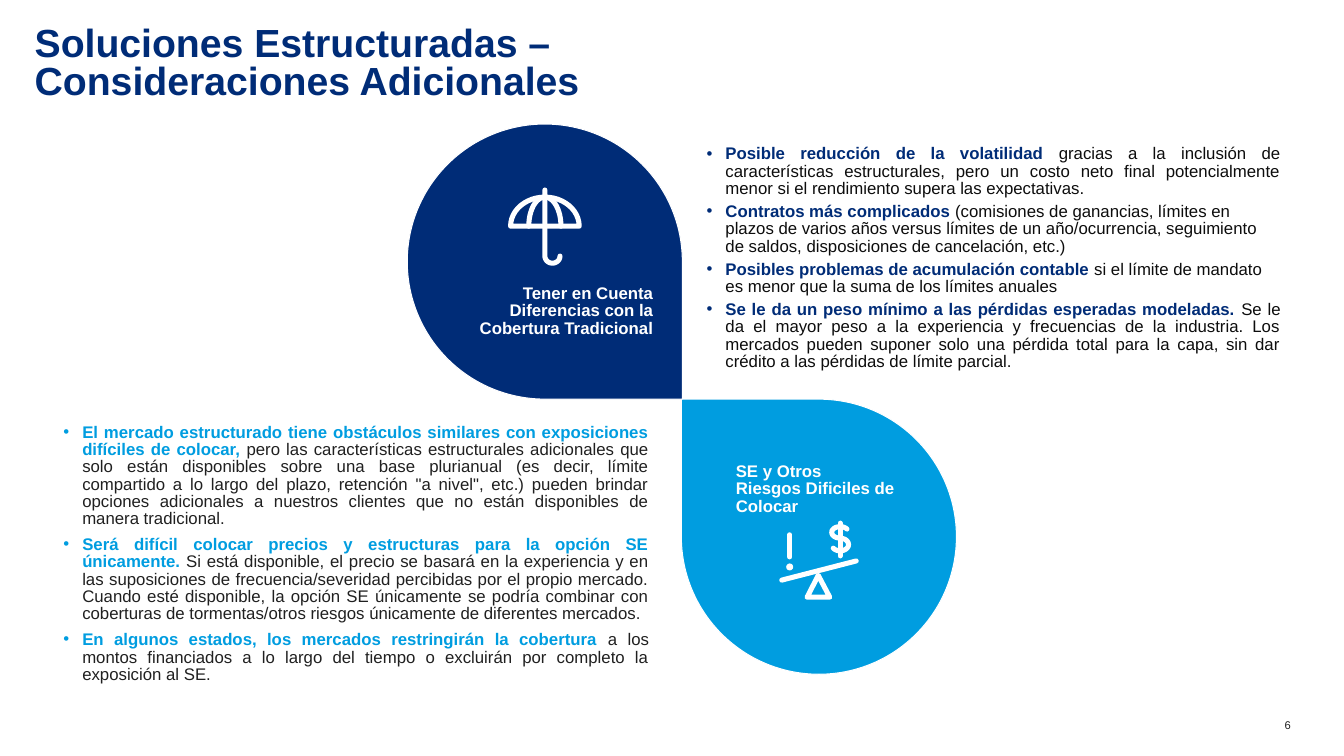
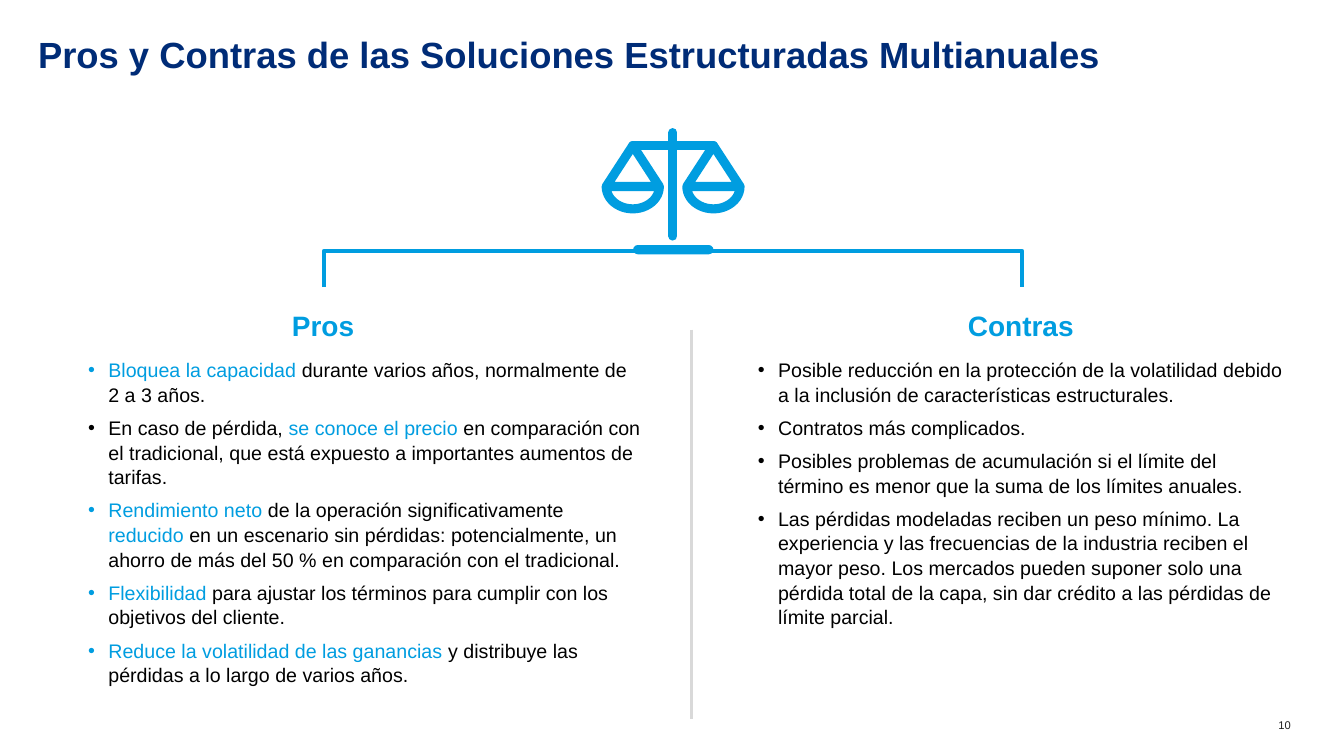
import math
import pptx
import pptx.util
import pptx.dml.color
import pptx.enum.shapes
import pptx.enum.text
import pptx.oxml.ns
import lxml.etree

Pt = pptx.util.Pt
qn = pptx.oxml.ns.qn
ALIGN = pptx.enum.text.PP_ALIGN
SHAPE = pptx.enum.shapes.MSO_SHAPE

COLORS = {
    "navy": "002C77", "sky": "009DE0", "white": "FFFFFF", "black": "000000",
    "ink": "202020", "body": "0D0D0D", "rule": "D9D9D9",
}
RGB = {name: pptx.dml.color.RGBColor.from_string(code) for name, code in COLORS.items()}

TITLE = {"bold": True, "line_spacing": 0.8}
PAGE_NUMBER = {"size": 8, "alignment": ALIGN.RIGHT}
DROP_LABEL = {"size": 12, "bold": True, "line_spacing": 0.86}
DROP_LIST = {"size": 12, "line_spacing": 0.86, "indent": 13.5, "inset": (7.2, 3.6)}
COLUMN_HEAD = {"size": 20, "bold": True, "line_spacing": 1.05, "alignment": ALIGN.CENTER}
COLUMN_LIST = {"size": 14, "line_spacing": 1.05, "space_after": Pt(6), "indent": 14.4}


def add_text(slide, box, paragraphs, style):
    """Each paragraph is (own format values, [(text, colour, own font values), ...])."""
    frame = slide.shapes.add_textbox(*map(Pt, box)).text_frame
    frame.word_wrap = True
    side, top = style.get("inset", (0, 0))
    frame.margin_left = frame.margin_right = Pt(side)
    frame.margin_top = frame.margin_bottom = Pt(top)
    for index, (own_format, runs) in enumerate(paragraphs):
        paragraph = frame.add_paragraph() if index else frame.paragraphs[0]
        if "indent" in style:
            properties = paragraph._p.get_or_add_pPr()
            properties.set("marL", str(Pt(style["indent"])))
            properties.set("indent", str(-Pt(style["indent"])))
            lxml.etree.SubElement(properties, qn("a:buFont")).set("typeface", "Arial")
            lxml.etree.SubElement(properties, qn("a:buChar")).set("char", "•")
        layout = {**style, **own_format}
        for name in ("alignment", "line_spacing", "space_after"):
            if name in layout:
                setattr(paragraph, name, layout[name])
        for text, color, own_font in runs:
            for line_index, line in enumerate(text.split("\n")):
                if line_index:
                    paragraph.add_line_break()
                run = paragraph.add_run()
                run.text = line
                font = {"name": "Arial", "size": Pt(style["size"]),
                        "bold": style.get("bold", False), **own_font}
                for name, value in font.items():
                    setattr(run.font, name, value)
                run.font.color.rgb = RGB[color]


def add_strokes(slide, outlines, color, width, cap="rnd"):
    """Outline steps are points (x, y) or arcs (cx, cy, rx, ry, start, end) in degrees."""
    contours = []
    for outline in outlines:
        points = []
        for step in outline:
            if len(step) == 2:
                points.append(step)
                continue
            cx, cy, rx, ry, start, end = step
            for part in range(25):
                angle = math.radians(start + (end - start) * part / 24)
                points.append((cx + rx * math.cos(angle), cy + ry * math.sin(angle)))
        contours.append([(Pt(x), Pt(y)) for x, y in points])
    first = contours[0]
    if len(contours) == 1 and len(first) == 2:
        stroke = slide.shapes.add_connector(
            pptx.enum.shapes.MSO_CONNECTOR.STRAIGHT, *first[0], *first[1])
    else:
        builder = slide.shapes.build_freeform(*first[0])
        for index, contour in enumerate(contours):
            if index:
                builder.move_to(*contour[0])
            builder.add_line_segments(contour[1:], close=False)
        stroke = builder.convert_to_shape()
        stroke.fill.background()
    stroke.line.color.rgb = RGB[color]
    stroke.line.width = Pt(width)
    properties = stroke._element.spPr
    line = properties.find(qn("a:ln"))
    line.set("cap", cap)
    lxml.etree.SubElement(line, qn("a:round"))
    lxml.etree.SubElement(properties, qn("a:effectLst"))


deck = pptx.Presentation()
deck.slide_width, deck.slide_height = Pt(960), Pt(540)

slides = []
for title, title_left, title_top, title_size, number in (
    ("Soluciones Estructuradas – \nConsideraciones Adicionales", 24.8, 19.7, 28, "6"),
    ("Pros y Contras de las Soluciones Estructuradas Multianuales", 27.2, 28.8, 26, "10"),
):
    slide = deck.slides.add_slide(deck.slide_layouts[6])
    add_text(slide, (title_left, title_top, 883.4, 38.9),
             [({}, [(title, "navy", {})])], {**TITLE, "size": title_size})
    add_text(slide, (899.8, 513.4, 22.3, 9.4), [({}, [(number, "ink", {})])], PAGE_NUMBER)
    slides.append(slide)
considerations, pros_cons = slides

# Considerations: two drops that meet at their tips
DROP_SIZE = 196.5
for left, top, turn, color, label, label_box, alignment in (
    (486.7, 285.1, 270, "sky", "SE y Otros\nRiesgos Dificiles de Colocar",
     (525.6, 331.2, 120.2, 37.4), ALIGN.LEFT),
    (290.9, 88.6, 90, "navy", "Tener en Cuenta\nDiferencias con la Cobertura Tradicional",
     (324, 204.1, 142.6, 37.4), ALIGN.RIGHT),
):
    drop = considerations.shapes.add_shape(
        SHAPE.TEAR, Pt(left), Pt(top), Pt(DROP_SIZE), Pt(DROP_SIZE))
    drop.rotation = turn
    drop.shadow.inherit = False
    drop.fill.solid()
    drop.fill.fore_color.rgb = RGB[color]
    drop.line.color.rgb = RGB["white"]
    drop.line.width = Pt(0.75)
    add_text(considerations, label_box,
             [({"alignment": alignment}, [(label, "white", {})])], DROP_LABEL)

traditional_points = (
    (ALIGN.JUSTIFY, "Posible reducción de la volatilidad ",
     "gracias a la inclusión de características estructurales, pero un costo neto final "
     "potencialmente menor si el rendimiento supera las expectativas."),
    (ALIGN.LEFT, "Contratos más complicados ",
     "(comisiones de ganancias, límites en plazos de varios años versus límites de un "
     "año/ocurrencia, seguimiento de saldos, disposiciones de cancelación, etc.)"),
    (ALIGN.LEFT, "Posibles problemas de acumulación contable ",
     "si el límite de mandato es menor que la suma de los límites anuales"),
    (ALIGN.JUSTIFY, "Se le da un peso mínimo a las pérdidas esperadas modeladas. ",
     "Se le da el mayor peso a la experiencia y frecuencias de la industria. Los mercados "
     "pueden suponer solo una pérdida total para la capa, sin dar crédito a las pérdidas "
     "de límite parcial."),
)
hard_risk_points = (
    (ALIGN.JUSTIFY, "El mercado estructurado tiene obstáculos similares con exposiciones "
     "difíciles de colocar, ",
     "pero las características estructurales adicionales que solo están disponibles sobre "
     "una base plurianual (es decir, límite compartido a lo largo del plazo, retención "
     "\"a nivel\", etc.) pueden brindar opciones adicionales a nuestros clientes que no "
     "están disponibles de manera tradicional."),
    (ALIGN.JUSTIFY, "Será difícil colocar precios y estructuras para la opción SE únicamente. ",
     "Si está disponible, el precio se basará en la experiencia y en las suposiciones de "
     "frecuencia/severidad percibidas por el propio mercado. Cuando esté disponible, la "
     "opción SE únicamente se podría combinar con coberturas de tormentas/otros riesgos "
     "únicamente de diferentes mercados."),
    (ALIGN.JUSTIFY, "En algunos estados, los mercados restringirán la cobertura ",
     "a los montos financiados a lo largo del tiempo o excluirán por completo la "
     "exposición al SE."),
)
for box, points, lead_color, rest_color, gap in (
    ((497.6, 100.8, 424.2, 169.2), traditional_points, "navy", "body", 4),
    ((38.2, 299.5, 432.5, 194.4), hard_risk_points, "sky", "ink", 6),
):
    add_text(considerations, box,
             [({"alignment": alignment},
               [(lead, lead_color, {"bold": True}), (rest, rest_color, {})])
              for alignment, lead, rest in points],
             {**DROP_LIST, "space_after": Pt(gap)})

umbrella = [
    [(389.2, 161.6, 24.5, 20.8, 180, 360), (364.7, 161.6)],
    [(389.2, 161.6, 11.5, 20.8, 180, 360)],
    [(389.2, 135.7), (394.6, 182.9, 5.4, 5.1, 180, 0)],
]
seesaw = [
    [(558.4, 414.4), (611.6, 400.7)],
    [(584.5, 411), (576.5, 426.6), (592.7, 426.6), (584.5, 411)],
]
dollar = [
    [(600.1, 373.7), (600.1, 397.1)],
    [(600.1, 380.3, 6, 4.1, -35, -270), (600.1, 389, 6, 4.5, -90, 145)],
]
exclamation_bar = [[(564.1, 382), (564.1, 397.8)]]
for icon in (umbrella, seesaw, dollar, exclamation_bar):
    add_strokes(considerations, icon, "white", 3.6)

# Pros and cons: bracket, divider and scale
add_strokes(pros_cons, [[(231.3, 205.2), (231.3, 179.3), (730, 179.3), (730, 205.2)]],
            "sky", 3, cap="flat")
add_strokes(pros_cons, [[(493.9, 235.4), (493.9, 513.4)]], "rule", 2, cap="flat")

PAN_CENTERS = (452, 509.6)
PAN_TOP, PAN_RADIUS, BEAM_TOP = 133.2, 19, 104
scale = [
    [(480.7, 94.7), (480.7, 168.6)],
    [(PAN_CENTERS[0], BEAM_TOP), (PAN_CENTERS[1], BEAM_TOP)],
]
for center in PAN_CENTERS:
    scale.append([(center, PAN_TOP, PAN_RADIUS, 16, 0, 180),
                  (center, BEAM_TOP), (center + PAN_RADIUS, PAN_TOP),
                  (center - PAN_RADIUS, PAN_TOP)])
add_strokes(pros_cons, scale, "sky", 6.5)

# Solid details of the icons: exclamation dot and scale foot
for slide, kind, box, color in (
    (considerations, SHAPE.OVAL, (561.6, 402.5, 5, 5), "white"),
    (pros_cons, SHAPE.ROUNDED_RECTANGLE, (452.2, 175, 57.4, 6.6), "sky"),
):
    detail = slide.shapes.add_shape(kind, *map(Pt, box))
    if kind == SHAPE.ROUNDED_RECTANGLE:
        detail.adjustments[0] = 0.5
    detail.shadow.inherit = False
    detail.fill.solid()
    detail.fill.fore_color.rgb = RGB[color]
    detail.line.fill.background()

pros = (
    (("Bloquea la capacidad ", "sky"),
     ("durante varios años, normalmente de 2 a 3 años.", "black")),
    (("En caso de pérdida, ", "black"), ("se conoce el precio ", "sky"),
     ("en comparación con el tradicional, que está expuesto a importantes aumentos de "
      "tarifas.", "black")),
    (("Rendimiento neto ", "sky"), ("de la operación significativamente ", "black"),
     ("reducido ", "sky"),
     ("en un escenario sin pérdidas: potencialmente, un ahorro de más del 50 % en "
      "comparación con el tradicional.", "black")),
    (("Flexibilidad", "sky"),
     (" para ajustar los términos para cumplir con los objetivos del cliente.", "black")),
    (("Reduce la volatilidad de las ganancias ", "sky"),
     ("y distribuye las pérdidas a lo largo de varios años.", "black")),
)
contras = (
    (("Posible reducción en la protección de la volatilidad debido a la inclusión de "
      "características estructurales.", "black"),),
    (("Contratos más complicados.", "black"),),
    (("Posibles problemas de acumulación si el límite del término es menor que la suma de "
      "los límites anuales.", "black"),),
    (("Las pérdidas modeladas reciben un peso mínimo. La experiencia y las frecuencias de "
      "la industria reciben el mayor peso. Los mercados pueden suponer solo una pérdida "
      "total de la capa, sin dar crédito a las pérdidas de límite parcial.", "black"),),
)
for heading, heading_left, points, list_left, list_width in (
    ("Pros", 187.2, pros, 63, 395.3),
    ("Contras", 685.6, contras, 541.4, 375.8),
):
    add_text(pros_cons, (heading_left, 218.9, 87.1, 23.8),
             [({}, [(heading, "sky", {})])], COLUMN_HEAD)
    add_text(pros_cons, (list_left, 254.9, list_width, 236.9),
             [({}, [(text, color, {}) for text, color in runs]) for runs in points],
             COLUMN_LIST)

deck.save("out.pptx")
